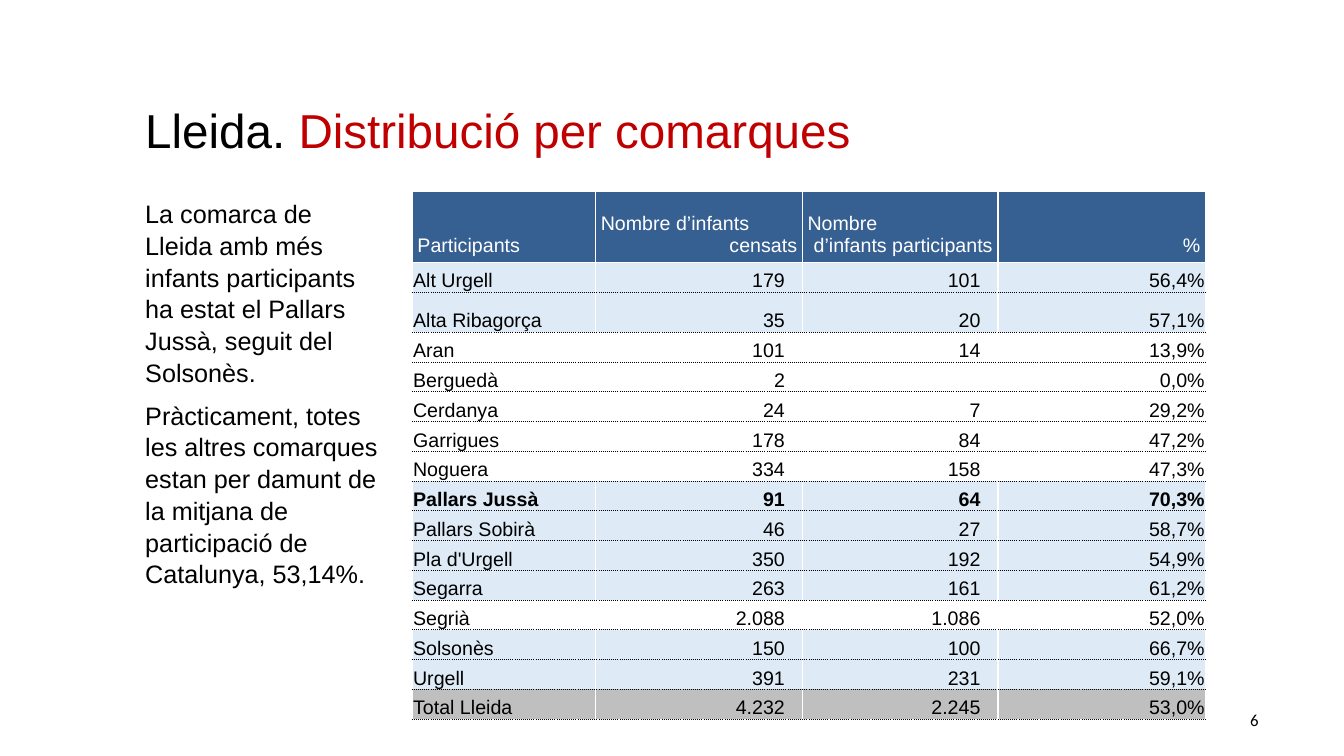
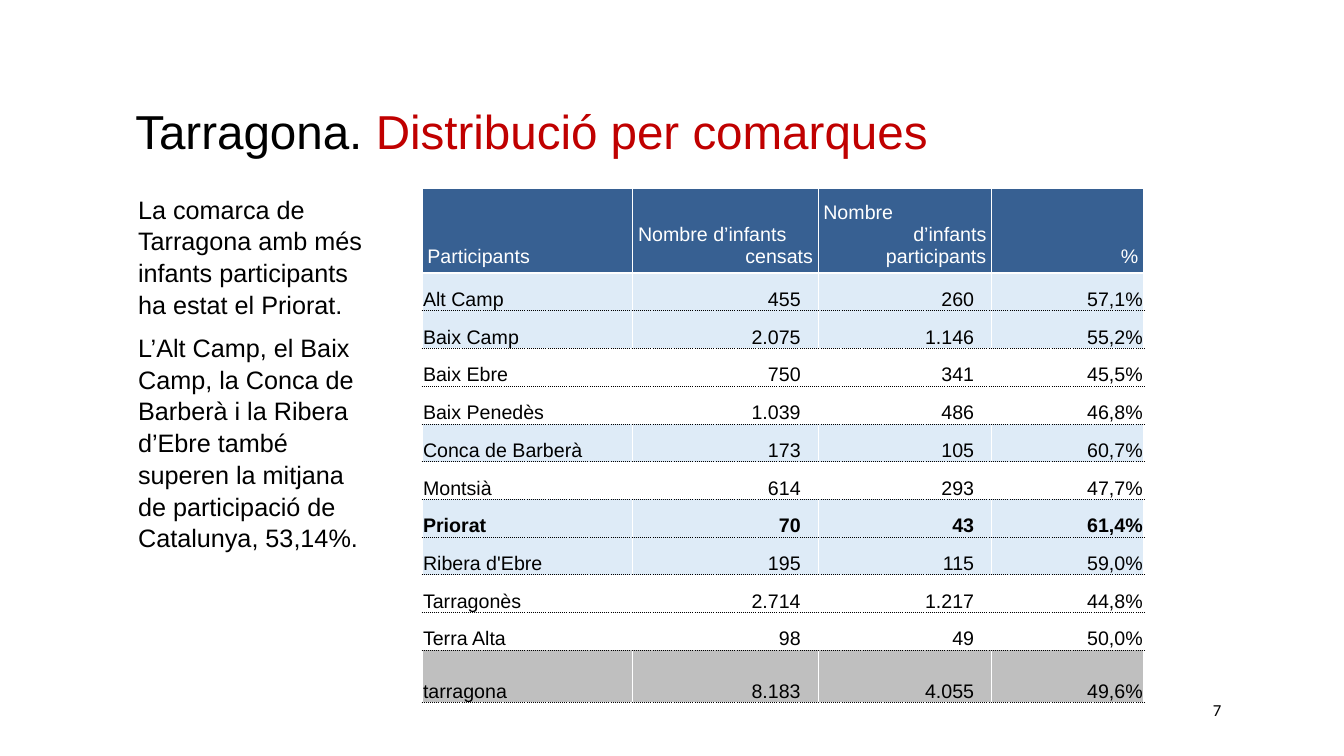
import pptx
import pptx.dml.color
import pptx.enum.text
import pptx.oxml.ns
import pptx.util
from lxml import etree

Cm = pptx.util.Cm
Pt = pptx.util.Pt
Align = pptx.enum.text.PP_ALIGN
Anchor = pptx.enum.text.MSO_ANCHOR
qn = pptx.oxml.ns.qn

COLORS = {
    "ink": "000000",
    "accent": "C00000",
    "paper": "FFFFFF",
    "header": "376092",
    "above": "DEEBF7",
    "total": "BFBFBF",
}
INSET = Cm(0.13)
CATALAN_MEAN = 53.14

SLIDES = [
    {
        "number": "6",
        "number_at": (31.37, 17.75),
        "province": "Lleida. ",
        "title_at": (3.53, 2.34),
        "text_at": (3.53, 4.83, 6.2, 9.78),
        "text": [
            "La comarca de Lleida amb més infants participants ha estat el Pallars Jussà, seguit del Solsonès.",
            "Pràcticament, totes les altres comarques estan per damunt de la mitjana de participació de Catalunya, 53,14%.",
        ],
        "table_at": (10.39, 4.83),
        "columns": (4.62, 5.21, 4.93, 5.23),
        "row_height": 0.75,
        "special_heights": {0: 1.78, 2: 1.01},
        "rows": [
            ("Alt Urgell", "179", "101", "56,4%"),
            ("Alta Ribagorça", "35", "20", "57,1%"),
            ("Aran", "101", "14", "13,9%"),
            ("Berguedà", "2", "", "0,0%"),
            ("Cerdanya", "24", "7", "29,2%"),
            ("Garrigues", "178", "84", "47,2%"),
            ("Noguera", "334", "158", "47,3%"),
            ("Pallars Jussà", "91", "64", "70,3%"),
            ("Pallars Sobirà", "46", "27", "58,7%"),
            ("Pla d'Urgell", "350", "192", "54,9%"),
            ("Segarra", "263", "161", "61,2%"),
            ("Segrià", "2.088", "1.086", "52,0%"),
            ("Solsonès", "150", "100", "66,7%"),
            ("Urgell", "391", "231", "59,1%"),
            ("Total Lleida", "4.232", "2.245", "53,0%"),
        ],
    },
    {
        "number": "7",
        "number_at": (30.43, 17.5),
        "province": "Tarragona. ",
        "title_at": (3.28, 2.36),
        "text_at": (3.35, 4.72, 6.05, 9.02),
        "text": [
            "La comarca de Tarragona amb més infants participants ha estat el Priorat.",
            "L’Alt Camp, el Baix Camp, la Conca de Barberà i la Ribera d’Ebre també superen la mitjana de participació de Catalunya, 53,14%.",
        ],
        "table_at": (10.64, 4.75),
        "columns": (5.31, 4.67, 4.37, 3.83),
        "row_height": 0.95,
        "special_heights": {0: 2.13, 11: 1.32},
        "rows": [
            ("Alt Camp", "455", "260", "57,1%"),
            ("Baix Camp", "2.075", "1.146", "55,2%"),
            ("Baix Ebre", "750", "341", "45,5%"),
            ("Baix Penedès", "1.039", "486", "46,8%"),
            ("Conca de Barberà", "173", "105", "60,7%"),
            ("Montsià", "614", "293", "47,7%"),
            ("Priorat", "70", "43", "61,4%"),
            ("Ribera d'Ebre", "195", "115", "59,0%"),
            ("Tarragonès", "2.714", "1.217", "44,8%"),
            ("Terra Alta", "98", "49", "50,0%"),
            ("tarragona", "8.183", "4.055", "49,6%"),
        ],
    },
]
HEADINGS = [
    [("Participants", Align.LEFT)],
    [("Nombre d’infants", Align.LEFT), ("censats", Align.RIGHT)],
    [("Nombre", Align.LEFT), ("d’infants participants", Align.RIGHT)],
    [("%", Align.RIGHT)],
]


def write(para, text, size=14, color="ink", bold=False, font="Arial", align=Align.LEFT):
    """Add one formatted run to a paragraph; empty text only sets the line size."""
    para.alignment = align
    if not text:
        etree.SubElement(para._p, qn("a:endParaRPr"), sz=str(size * 100))
        return
    span = para.add_run()
    span.text = text
    span.font.name = font
    span.font.size = Pt(size)
    span.font.bold = bold
    span.font.color.rgb = pptx.dml.color.RGBColor.from_string(COLORS[color])


def set_border(cell, side, color, width, dash):
    line = etree.SubElement(cell._tc.get_or_add_tcPr(), qn("a:ln" + side), w=str(Pt(width)))
    fill = etree.SubElement(line, qn("a:solidFill"))
    etree.SubElement(fill, qn("a:srgbClr"), val=COLORS[color])
    etree.SubElement(line, qn("a:prstDash"), val=dash)


deck = pptx.Presentation()
deck.slide_width, deck.slide_height = Cm(33.87), Cm(19.05)

for content in SLIDES:
    page = deck.slides.add_slide(deck.slide_layouts[1])
    title, body = page.placeholders
    number = page.shapes.add_textbox(0, 0, 0, 0)

    places = [
        (title, (*content["title_at"], 26.11, 1.7)),
        (body, content["text_at"]),
        (number, (*content["number_at"], 0.48, 0.76)),
    ]
    for box, place in places:
        box.left, box.top, box.width, box.height = map(Cm, place)
        frame = box.text_frame
        frame.margin_left = frame.margin_right = INSET
        frame.margin_top = frame.margin_bottom = INSET
        frame.auto_size = pptx.enum.text.MSO_AUTO_SIZE.NONE
        frame.word_wrap = box is not number
        frame.vertical_anchor = Anchor.MIDDLE if box is number else Anchor.TOP

    para = title.text_frame.paragraphs[0]
    para.line_spacing = 1.05
    write(para, content["province"], size=34)
    write(para, "Distribució per comarques", size=34, color="accent")

    for index, text in enumerate(content["text"]):
        para = body.text_frame.add_paragraph() if index else body.text_frame.paragraphs[0]
        properties = para._p.get_or_add_pPr()
        properties.set("marL", "0")
        properties.set("indent", "0")
        etree.SubElement(properties, qn("a:buNone"))
        para.line_spacing = 1.05
        para.space_before = Pt(8 if index else 0)
        write(para, text, size=18)

    write(number.text_frame.paragraphs[0], content["number"], size=12, font="Calibri", align=Align.RIGHT)

    rows, columns = content["rows"], content["columns"]
    heights = [content["special_heights"].get(r, content["row_height"]) for r in range(len(rows) + 1)]
    left, top = content["table_at"]
    table = page.shapes.add_table(
        len(heights), len(columns), Cm(left), Cm(top), Cm(sum(columns)), Cm(sum(heights))
    ).table
    table.first_row = table.horz_banding = False
    for column, width in zip(table.columns, columns):
        column.width = Cm(width)
    for row, height in zip(table.rows, heights):
        row.height = Cm(height)

    shares = [float(row[-1].rstrip("%").replace(",", ".")) for row in rows]
    best = max(shares[:-1])

    for r in range(len(heights)):
        is_header = r == 0
        if is_header:
            shade = "header"
        elif r == len(rows):
            shade = "total"
        else:
            shade = "above" if shares[r - 1] > CATALAN_MEAN else None

        for c in range(len(columns)):
            cell = table.cell(r, c)
            cell.vertical_anchor = Anchor.BOTTOM
            cell.margin_left = cell.margin_right = cell.margin_top = INSET if is_header else Cm(0.02)
            cell.margin_bottom = INSET if is_header else 0
            if not is_header and c in (1, 2):
                cell.margin_right = Cm(0.44)

            dotted, plain = ("ink", 0.5, "sysDot"), ("paper", 1, "solid")
            set_border(cell, "L", *plain)
            set_border(cell, "R", *plain)
            set_border(cell, "T", *(dotted if r > 1 else plain))
            set_border(cell, "B", *(plain if is_header else dotted))
            if shade:
                cell.fill.solid()
                cell.fill.fore_color.rgb = pptx.dml.color.RGBColor.from_string(COLORS[shade])
            else:
                cell.fill.background()

            if is_header:
                lines = HEADINGS[c]
            else:
                lines = [(rows[r - 1][c], Align.RIGHT if c else Align.LEFT)]
            for index, (text, align) in enumerate(lines):
                para = cell.text_frame.add_paragraph() if index else cell.text_frame.paragraphs[0]
                write(
                    para,
                    text,
                    color="paper" if is_header else "ink",
                    bold=not is_header and shares[r - 1] == best,
                    align=align,
                )

deck.save("out.pptx")
